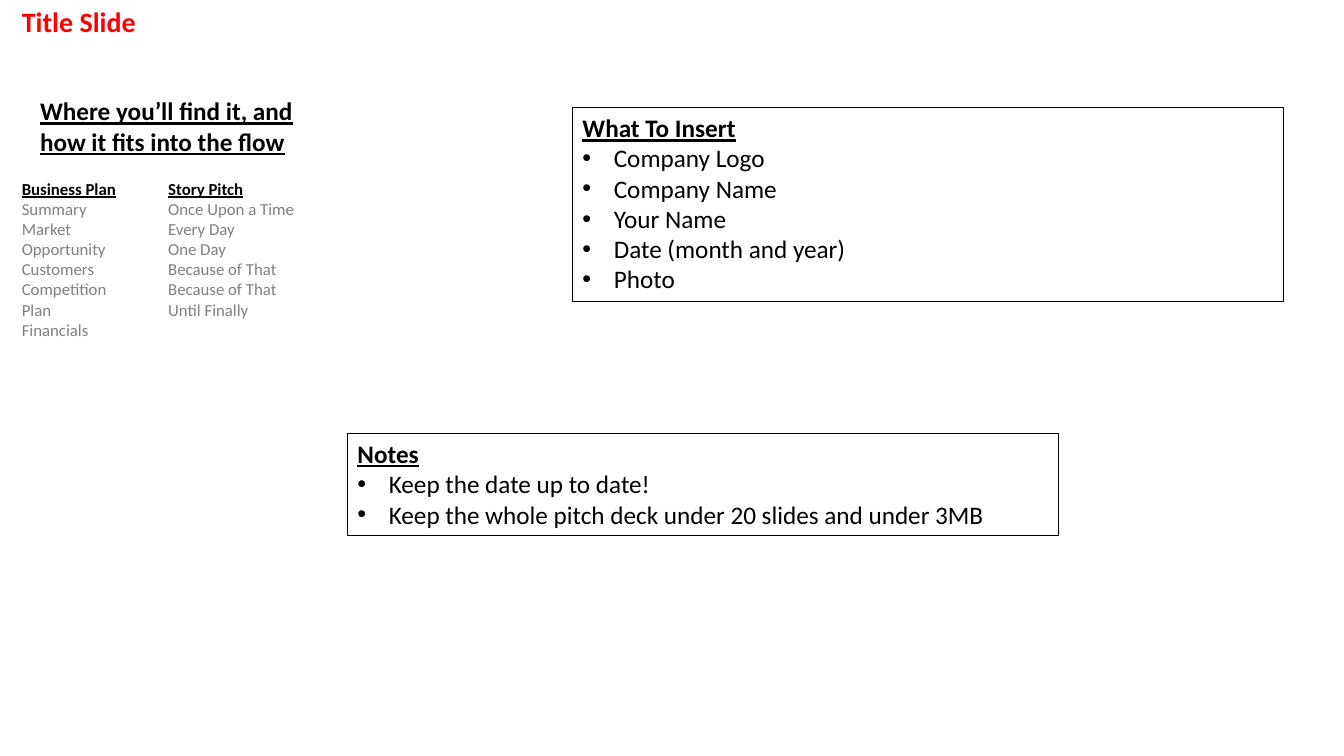
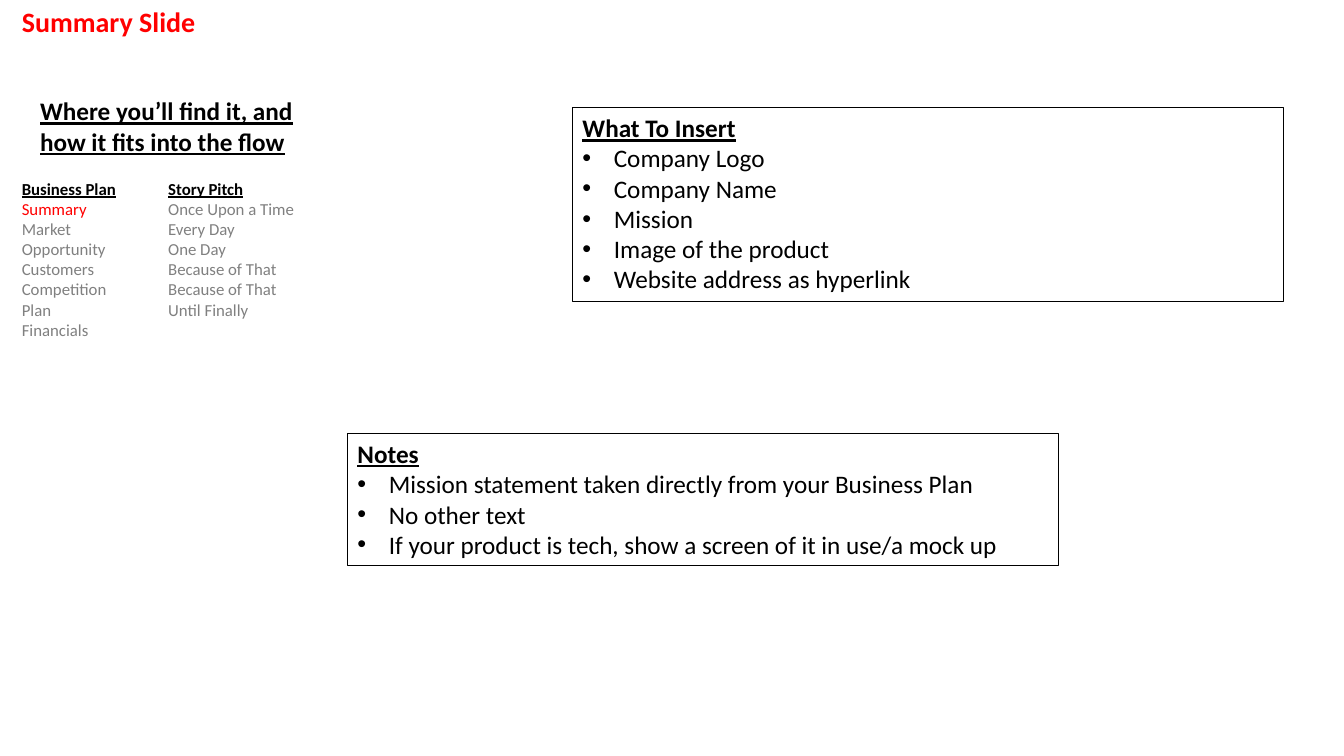
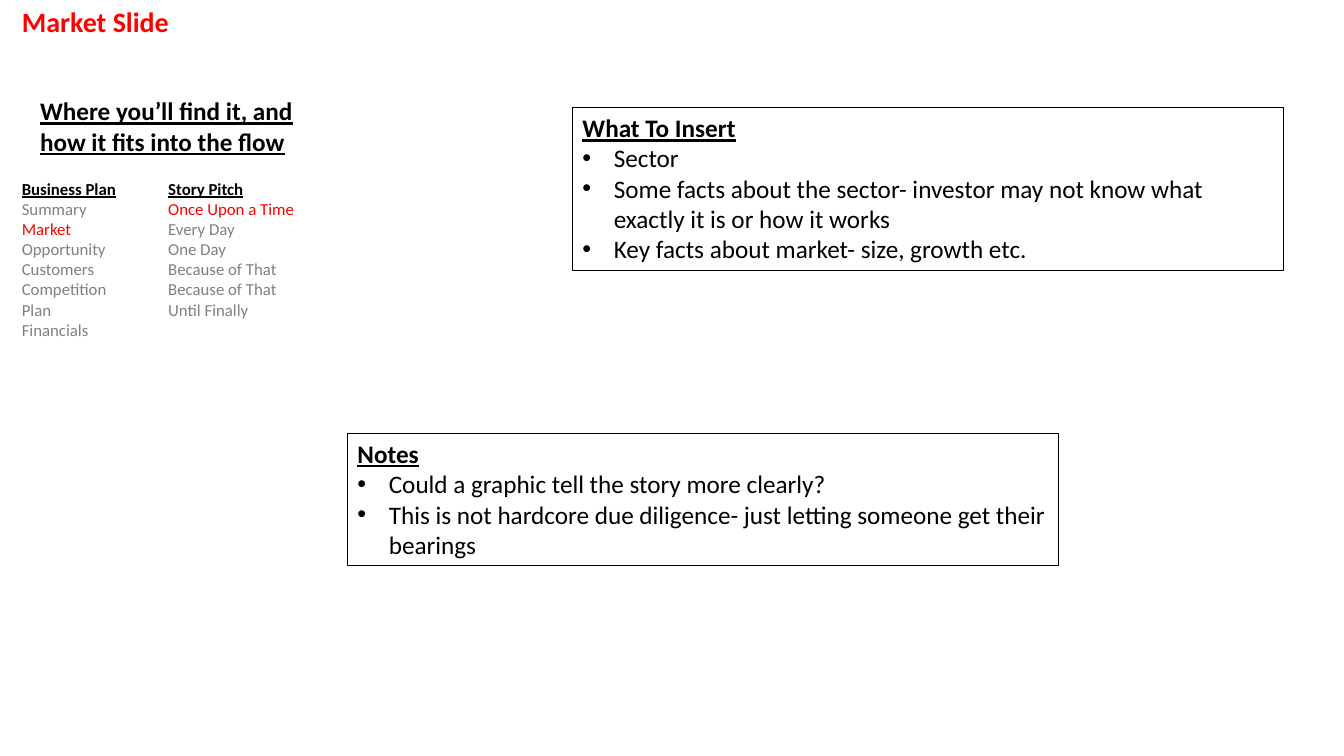
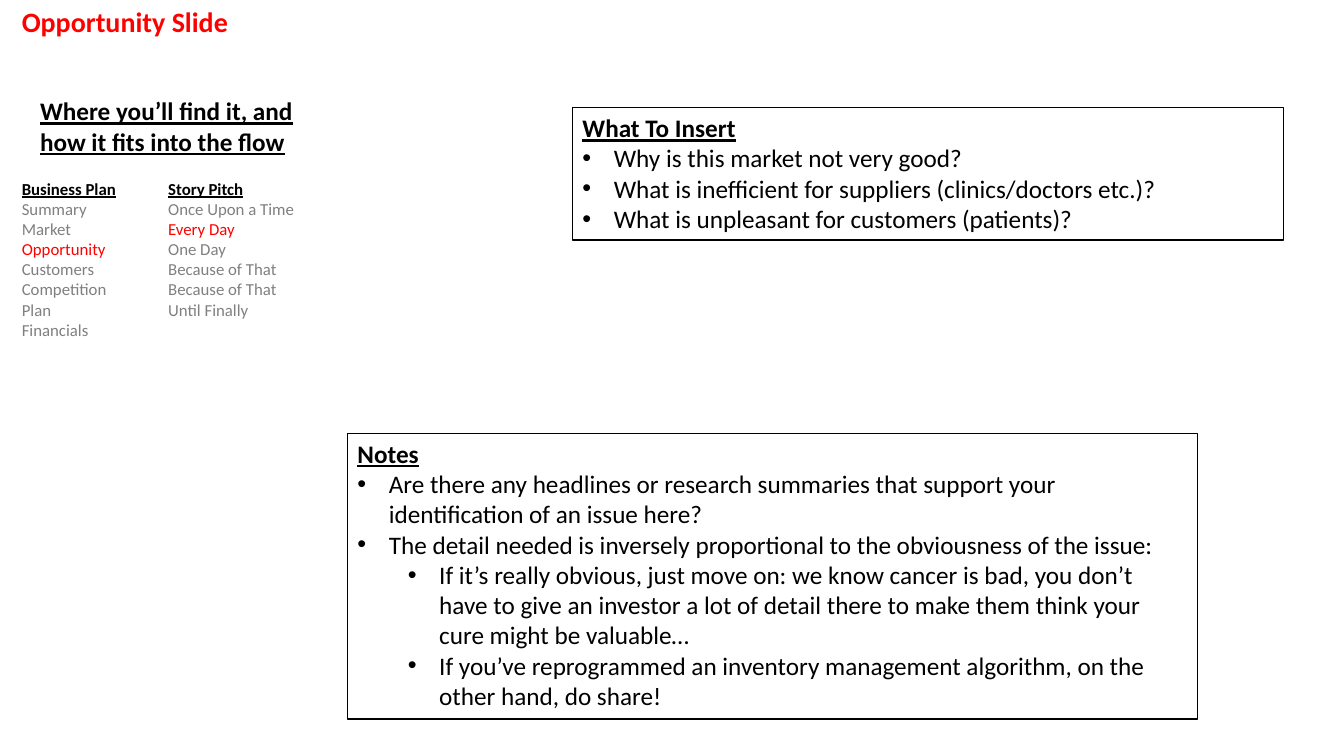
from lxml import etree
from pptx import Presentation
from pptx import util as u
from pptx.dml.color import RGBColor
from pptx.enum import text
from pptx.oxml import ns

COLORS = {"red": "FF0000", "black": "000000", "grey": "808080"}
FONT = "Calibri"
FLOW = "Where you’ll find it, and how it fits into the flow"
PLAN = ["Summary", "Market", "Opportunity", "Customers", "Competition", "Plan", "Financials"]
PITCH = ["Once Upon a Time", "Every Day", "One Day", "Because of That", "Because of That",
         "Until Finally"]
LISTS = [("Business Plan", PLAN, 0.3, 3.12), ("Story Pitch", PITCH, 3.99, 4.11)]

SLIDES = [
    {
        "title": "Title Slide",
        "hot": (None, None),
        "insert": ["Company Logo", "Company Name", "Your Name", "Date (month and year)", "Photo"],
        "notes": ["Keep the date up to date!",
                  "Keep the whole pitch deck under 20 slides and under 3MB"],
        "rows": (6, 3),
    },
    {
        "title": "Summary Slide",
        "hot": (0, None),
        "insert": ["Company Logo", "Company Name", "Mission", "Image of the product",
                   "Website address as hyperlink"],
        "notes": ["Mission statement taken directly from your Business Plan",
                  "No other text",
                  "If your product is tech, show a screen of it in use/a mock up"],
        "rows": (6, 4),
    },
    {
        "title": "Market Slide",
        "hot": (1, 0),
        "insert": ["Sector",
                   "Some facts about the sector- investor may not know what exactly it is "
                   "or how it works",
                   "Key facts about market- size, growth etc."],
        "notes": ["Could a graphic tell the story more clearly?",
                  "This is not hardcore due diligence- just letting someone get their bearings"],
        "rows": (5, 4),
    },
    {
        "title": "Opportunity Slide",
        "hot": (2, 1),
        "insert": ["Why is this market not very good?",
                   "What is inefficient for suppliers (clinics/doctors etc.)?",
                   "What is unpleasant for customers (patients)?"],
        "notes": ["Are there any headlines or research summaries that support your "
                  "identification of an issue here?",
                  "The detail needed is inversely proportional to the obviousness of the issue:",
                  ["If it’s really obvious, just move on: we know cancer is bad, you don’t have "
                   "to give an investor a lot of detail there to make them think your cure might "
                   "be valuable…",
                   "If you’ve reprogrammed an inventory management algorithm, on the other hand, "
                   "do share!"]],
        "rows": (4, 9),
        "wide": 21.41,
    },
]


def bullet(para, level):
    para.level = level
    props = para._p.get_or_add_pPr()
    props.set("marL", str(u.Cm(0.79 + 1.27 * level)))
    props.set("indent", str(u.Cm(-0.79)))
    etree.SubElement(props, ns.qn("a:buFont")).set("typeface", "Arial")
    etree.SubElement(props, ns.qn("a:buChar")).set("char", "•")


def write(slide, head, left, top, width, items=(), size=18, rows=1, color="black",
          under=True, body="black", hot=None, frame=False):
    high = 0.25 + rows * size * 0.0429
    box = slide.shapes.add_textbox(u.Cm(left), u.Cm(top), u.Cm(width), u.Cm(high))
    if frame:
        box.line.color.rgb = RGBColor.from_string(COLORS["black"])
        box.line.width = u.Pt(0.75)
    area = box.text_frame
    area.word_wrap = True
    area.auto_size = text.MSO_AUTO_SIZE.SHAPE_TO_FIT_TEXT
    lines = [(head, None)]
    for item in items:
        lines += [(item, 0)] if isinstance(item, str) else [(sub, 1) for sub in item]
    for i, (words, level) in enumerate(lines):
        first = level is None
        para = area.paragraphs[0] if first else area.add_paragraph()
        run = para.add_run()
        run.text = words
        font = run.font
        font.name, font.size = FONT, u.Pt(size)
        font.bold = first
        font.underline = first and under
        tint = color if first else "red" if hot == i - 1 else body
        font.color.rgb = RGBColor.from_string(COLORS[tint])
        if frame and not first:
            bullet(para, level)


def build(deck, data):
    slide = deck.slides.add_slide(deck.slide_layouts[6])
    top, low = data["rows"]
    write(slide, data["title"], 0.3, 0, 7.37, size=20, color="red", under=False)
    write(slide, "What To Insert", 14.43, 2.71, 17.91, data["insert"], rows=top, frame=True)
    for (head, items, left, width), hot in zip(LISTS, data["hot"]):
        write(slide, head, left, 4.37, width, items, size=12, rows=len(items) + 1,
              body="grey", hot=hot)
    write(slide, FLOW, 0.76, 2.29, 6.91, rows=2)
    write(slide, "Notes", 8.76, 10.92, data.get("wide", 17.91), data["notes"], rows=low,
          frame=True)


def main():
    deck = Presentation()
    deck.slide_width, deck.slide_height = u.Cm(33.87), u.Cm(19.05)
    for data in SLIDES:
        build(deck, data)
    deck.save("out.pptx")


if __name__ == "__main__":
    main()
